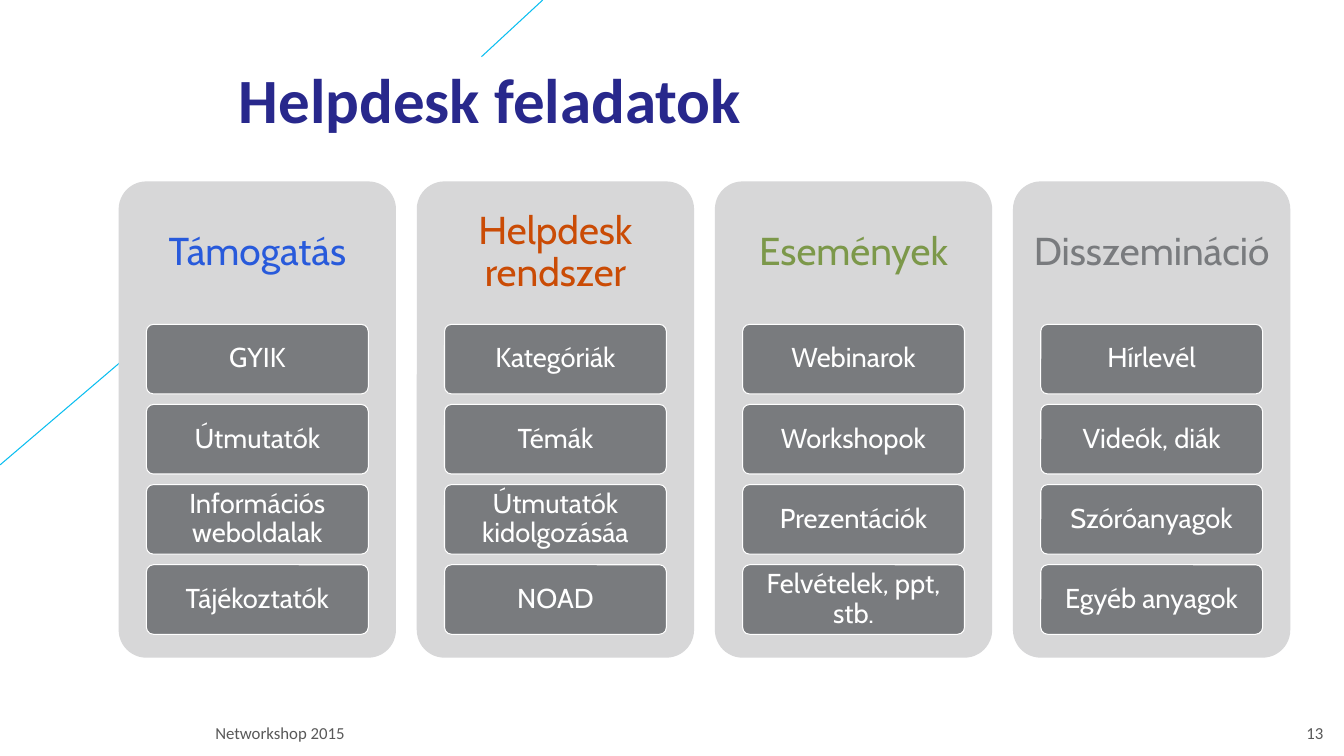
from pptx import Presentation
from pptx.dml.color import RGBColor
from pptx.enum.shapes import MSO_CONNECTOR, MSO_SHAPE
from pptx.enum.text import MSO_ANCHOR, MSO_AUTO_SIZE, PP_ALIGN
from pptx.oxml.ns import qn
from pptx.util import Inches, Pt
from lxml import etree

NAVY = RGBColor(0x28, 0x28, 0x8C)
CYAN = RGBColor(0x0A, 0xBE, 0xF0)
BLUE = RGBColor(0x28, 0x5A, 0xDB)
ORANGE = RGBColor(0xCA, 0x4B, 0x05)
GREEN = RGBColor(0x7C, 0x98, 0x4A)
GRAY = RGBColor(0x79, 0x7B, 0x7E)
LIGHT_GRAY = RGBColor(0xD7, 0xD7, 0xD8)
DARK_GRAY = RGBColor(0x59, 0x59, 0x59)
WHITE = RGBColor(0xFF, 0xFF, 0xFF)

COLUMNS = [
    ("Támogatás", BLUE,
     ["GYIK", "Útmutatók", "Információs weboldalak", "Tájékoztatók"]),
    ("Helpdesk rendszer", ORANGE,
     ["Kategóriák", "Témák", "Útmutatók kidolgozásáa", "NOAD"]),
    ("Események", GREEN,
     ["Webinarok", "Workshopok", "Prezentációk", "Felvételek, ppt, stb."]),
    ("Disszemináció", GRAY,
     ["Hírlevél", "Videók, diák", "Szóróanyagok", "Egyéb anyagok"]),
]


def write(shape, text, font, size, color, align=PP_ALIGN.LEFT,
          anchor=MSO_ANCHOR.MIDDLE, margins=(0.1, 0.05), spacing=1.0, bold=False):
    """Fill a shape with one formatted paragraph; margins are (side, top and bottom)."""
    frame = shape.text_frame
    frame.text = text
    frame.word_wrap = True
    frame.auto_size = MSO_AUTO_SIZE.NONE
    frame.vertical_anchor = anchor
    frame.margin_left = frame.margin_right = Inches(margins[0])
    frame.margin_top = frame.margin_bottom = Inches(margins[1])
    para = frame.paragraphs[0]
    para.alignment = align
    para.line_spacing = spacing
    span = para.runs[0]
    span.font.name = font
    span.font.size = Pt(size)
    span.font.bold = bold
    span.font.color.rgb = color


def add_text(page, left, top, width, height, text, *style, **options):
    box = page.shapes.add_textbox(
        Inches(left), Inches(top), Inches(width), Inches(height))
    write(box, text, *style, **options)


def add_rounded(page, left, top, width, height, fill):
    shape = page.shapes.add_shape(
        MSO_SHAPE.ROUNDED_RECTANGLE,
        Inches(left), Inches(top), Inches(width), Inches(height))
    shape.adjustments[0] = 0.1
    shape.shadow.inherit = False
    shape.fill.solid()
    shape.fill.fore_color.rgb = fill
    shape.line.fill.background()
    return shape


def add_accent_line(page, x1, y1, x2, y2):
    line = page.shapes.add_connector(
        MSO_CONNECTOR.STRAIGHT, Inches(x1), Inches(y1), Inches(x2), Inches(y2))
    line.line.color.rgb = CYAN
    line.line.width = Pt(1)
    etree.SubElement(line._element.spPr, qn("a:effectLst"))


def place_title(page, left, top, width, height):
    title = page.shapes.title
    title.left, title.top = Inches(left), Inches(top)
    title.width, title.height = Inches(width), Inches(height)
    write(title, "Helpdesk feladatok", "Calibri", 60, NAVY,
          anchor=MSO_ANCHOR.BOTTOM, bold=True)


def add_column(page, left, top, width, height, heading, color, tasks):
    """Draw a panel: heading in the top 30 %, task boxes in 80 % of the width."""
    add_rounded(page, left, top, width, height, LIGHT_GRAY)
    heading_height = 0.3 * height
    add_text(page, left, top, width, heading_height, heading, "Cabin", 37, color,
             align=PP_ALIGN.CENTER, margins=(0.15, 0.15), spacing=0.9)
    task_height, task_step = 0.92, 1.06
    for row, task in enumerate(tasks):
        box = add_rounded(page, left + 0.1 * width,
                          top + heading_height + row * task_step,
                          0.8 * width, task_height, GRAY)
        box.line.color.rgb = WHITE
        box.line.width = Pt(1)
        write(box, task, "Cabin", 26, WHITE, align=PP_ALIGN.CENTER,
              margins=(0.07, 0.05), spacing=0.9)


def add_columns(page, left, top, width, height):
    """Share the width among the columns, with gaps of 7.5 % of a column."""
    count = len(COLUMNS)
    column_width = width / (count + 0.075 * (count - 1))
    for index, (heading, color, tasks) in enumerate(COLUMNS):
        add_column(page, left + index * 1.075 * column_width, top,
                   column_width, height, heading, color, tasks)


def add_footer(page, top, height):
    add_text(page, 2.75, top, 13.94, height, "Networkshop 2015",
             "Calibri", 16, DARK_GRAY)
    add_text(page, 17, top, 0.79, height, "13", "Calibri", 16, DARK_GRAY,
             align=PP_ALIGN.CENTER)


def main():
    deck = Presentation()
    deck.slide_width, deck.slide_height = Inches(17.78), Inches(10)
    page = deck.slides.add_slide(deck.slide_layouts[5])
    add_accent_line(page, 0, 6.15, 2.25, 4.23)
    add_accent_line(page, 6.37, 0.75, 7.18, 0)
    place_title(page, 3.06, 0.73, 13.83, 1.12)
    add_columns(page, 1.57, 2.4, 15.5, 6.3)
    add_footer(page, 9.43, 0.53)
    deck.save("out.pptx")


if __name__ == "__main__":
    main()
